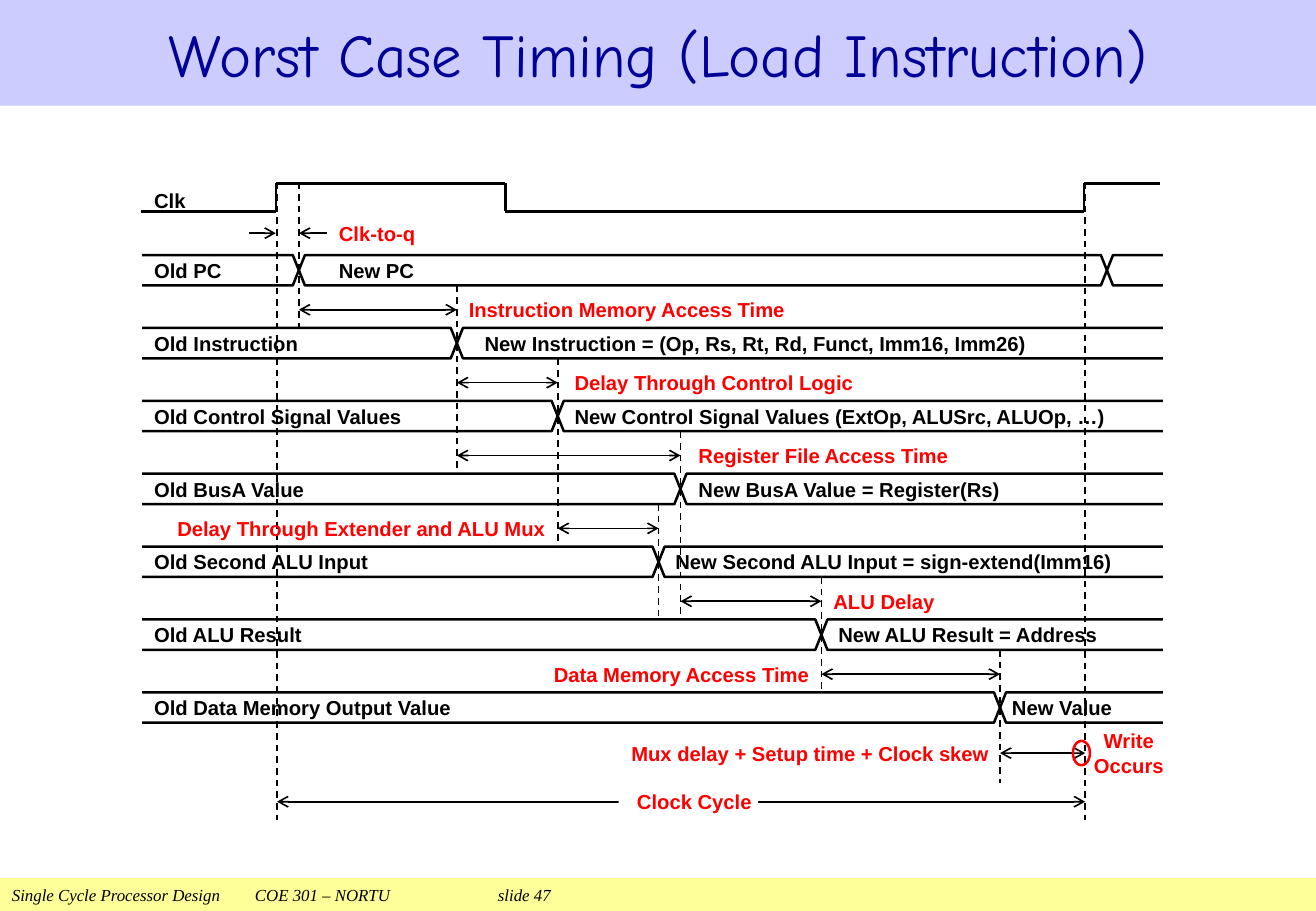
from lxml.etree import SubElement
from pptx import Presentation
from pptx.dml.color import RGBColor
from pptx.enum.dml import MSO_LINE
from pptx.enum.shapes import MSO_CONNECTOR, MSO_SHAPE
from pptx.enum.text import MSO_ANCHOR, PP_ALIGN
from pptx.oxml.ns import qn
from pptx.util import Emu, Pt

# Content: all lengths in px, 100 px to the inch
WIDTH, HEIGHT = 1083, 750
TITLE = "Worst Case Timing (Load Instruction)"
FOOTER = "Single Cycle Processor Design\tCOE 301 – NORTU\tslide 47"
FOOTER_TABS = (200, 400)

# Signals: old value, width, new value, left, width, places where the value changes
SIGNALS = [
    ("Old PC", 106, "New PC", 269, 120, (246, 911)),
    ("Old Instruction", 148,
     "New Instruction = (Op, Rs, Rt, Rd, Funct, Imm16, Imm26)", 389, 460, (376,)),
    ("Old Control Signal Values", 245,
     "New Control Signal Values (ExtOp, ALUSrc, ALUOp, …)", 463, 471, (459,)),
    ("Old BusA Value", 245, "New BusA Value = Register(Rs)", 565, 260, (560,)),
    ("Old Second ALU Input", 245,
     "New Second ALU Input = sign-extend(Imm16)", 546, 375, (542,)),
    ("Old ALU Result", 245, "New ALU Result = Address", 680, 245, (676,)),
    ("Old Data Memory Output Value", 260, "New Value", 823, 97, (823,)),
]
# Delays before each signal from the second on: label, left, width, align, start, end
DELAYS = [
    ("Instruction Memory Access Time", 376, 277, "left", 246, 376),
    ("Delay Through Control Logic", 463, 277, "left", 376, 459),
    ("Register File Access Time", 565, 277, "left", 376, 560),
    ("Delay Through Extender and ALU Mux", 119, 330, "right", 459, 542),
    ("ALU Delay", 676, 115, "left", 560, 676),
    ("Data Memory Access Time", 311, 355, "right", 676, 823),
]
# Dashed guides: x, top, bottom
GUIDES = [
    (228, 150, 675), (246, 150, 270), (376, 235, 390), (459, 295, 450),
    (560, 355, 510), (542, 415, 510), (676, 475, 570), (823, 535, 645),
    (893, 150, 675),
]
CLOCK = [(116, 174), (227, 174), (227, 151), (416, 151),
         (416, 174), (892, 174), (892, 151), (955, 151)]
WAVE_LEFT, WAVE_RIGHT, WAVE_TOP = 117, 957, 210
WAVE_HEIGHT, ROW_STEP, CROSS_HALF = 25, 60, 5

THEME = {
    "ink": "000000", "delay": "FF0000", "title": "000099", "paper": "FFFFFF",
    "title_band": "CCCCFF", "footer_band": "FFFF99",
    "label_font": "Arial", "title_font": "Comic Neue", "footer_font": "Times New Roman",
    "label_size": 12, "title_size": 36, "footer_size": 10,
    "thin": 1, "thick": 1.5,
}
ALIGN = {"left": PP_ALIGN.LEFT, "center": PP_ALIGN.CENTER, "right": PP_ALIGN.RIGHT}


def px(value):
    return Emu(value * 9144)


def color(name):
    return RGBColor.from_string(THEME[name])


presentation = Presentation()
presentation.slide_width, presentation.slide_height = px(WIDTH), px(HEIGHT)
slide = presentation.slides.add_slide(presentation.slide_layouts[6])
shapes = slide.shapes


def add_text(text, left, top, width, height, *, kind="label", ink="ink",
             align="left", fill=None, bold=True, italic=False, inset=10):
    box = tuple(map(px, (left, top, width, height)))
    if fill:
        shape = shapes.add_shape(MSO_SHAPE.RECTANGLE, *box)
        shape.shadow.inherit = False
        shape.fill.solid()
        shape.fill.fore_color.rgb = color(fill)
        shape.line.fill.background()
    else:
        shape = shapes.add_textbox(*box)
    frame = shape.text_frame
    frame.word_wrap = True
    frame.vertical_anchor = MSO_ANCHOR.MIDDLE
    frame.margin_left = px(inset)
    frame.margin_right = frame.margin_top = frame.margin_bottom = 0
    frame.text = text
    for paragraph in frame.paragraphs:
        paragraph.alignment = ALIGN[align]
        for run in paragraph.runs:
            font = run.font
            font.name = THEME[kind + "_font"]
            font.size = Pt(THEME[kind + "_size"])
            font.bold, font.italic = bold, italic
            font.color.rgb = color(ink)
    return shape


def add_line(start, end, *, weight="thin", dashed=False, heads=(), target=None):
    connector = shapes.add_connector(MSO_CONNECTOR.STRAIGHT, *map(px, start + end))
    if target is not None:
        connector.end_connect(target, 1)
    connector.line.color.rgb = color("ink")
    connector.line.width = Pt(THEME[weight])
    if dashed:
        connector.line.dash_style = MSO_LINE.DASH
    properties = connector.line._get_or_add_ln()
    for head in heads:
        SubElement(properties, qn("a:" + head), type="arrow")
    SubElement(connector._element.spPr, qn("a:effectLst"))


def add_wave(points):
    builder = shapes.build_freeform(*points[0], scale=9144)
    builder.add_line_segments(points[1:], close=False)
    wave = builder.convert_to_shape()
    wave.shadow.inherit = False
    wave.fill.background()
    wave.line.color.rgb = color("ink")
    wave.line.width = Pt(THEME["thick"])


def wave_points(crossings, level, other):
    points = [(WAVE_LEFT, level)]
    for x in crossings:
        points += [(x - CROSS_HALF, level), (x + CROSS_HALF, other)]
        level, other = other, level
    return points + [(WAVE_RIGHT, level)]


BOTH = ("headEnd", "tailEnd")

# Title and footer bands
add_text(TITLE, 0, 0, WIDTH, 87, kind="title", ink="title", align="center",
         fill="title_band", bold=False, inset=0)
footer = add_text(FOOTER, 0, 723, WIDTH, 27, kind="footer", fill="footer_band",
                  bold=False, italic=True)
tab_list = SubElement(footer.text_frame.paragraphs[0]._p.get_or_add_pPr(), qn("a:tabLst"))
for position in FOOTER_TABS:
    SubElement(tab_list, qn("a:tab"), pos=str(px(position)), algn="l")

# Guides
for x, top, bottom in GUIDES:
    add_line((x, top), (x, bottom), dashed=True)

# Signals
for row, (old, old_width, new, new_left, new_width, crossings) in enumerate(SIGNALS):
    top = WAVE_TOP + row * ROW_STEP
    bottom = top + WAVE_HEIGHT
    add_wave(wave_points(crossings, top, bottom))
    add_wave(wave_points(crossings, bottom, top))
    add_text(old, WAVE_LEFT, top + 5, old_width, 15)
    add_text(new, new_left, top + 5, new_width, 15)

# Delays
for row, (label, left, width, align, start, end) in enumerate(DELAYS, 1):
    middle = WAVE_TOP + row * ROW_STEP - 15
    box = add_text(label, left, middle - 15, width, 30, ink="delay", align=align)
    add_line((start, middle), (end, middle), heads=BOTH,
             target=box if left == end else None)

# Clock-to-output delay
clk_to_q = add_text("Clk-to-q", 269, 182, 78, 20, ink="delay")
add_line((227, 192), (205, 192), heads=("headEnd",))
add_line((246, 192), (269, 192), heads=("headEnd",), target=clk_to_q)

# Final delay and write
add_text("Mux delay + Setup time + Clock skew", 509, 600, 305, 40,
         ink="delay", align="right")
write = add_text("Write\nOccurs", 893, 605, 72, 30, ink="delay", align="center", inset=0)
add_line((823, 620), (893, 620), heads=BOTH, target=write)
ring = shapes.add_shape(MSO_SHAPE.OVAL, *map(px, (883, 610, 14, 20)))
ring.shadow.inherit = False
ring.fill.background()
ring.line.color.rgb = color("delay")
ring.line.width = Pt(THEME["thick"])

# Clock cycle
add_line((228, 660), (893, 660), heads=BOTH)
add_text("Clock Cycle", 509, 645, 115, 30, ink="delay", align="center", fill="paper")

# Clock signal
add_text("Clk", WAVE_LEFT, 155, 106, 20)
for start, end in zip(CLOCK, CLOCK[1:]):
    add_line(start, end, weight="thick")

presentation.save("out.pptx")
